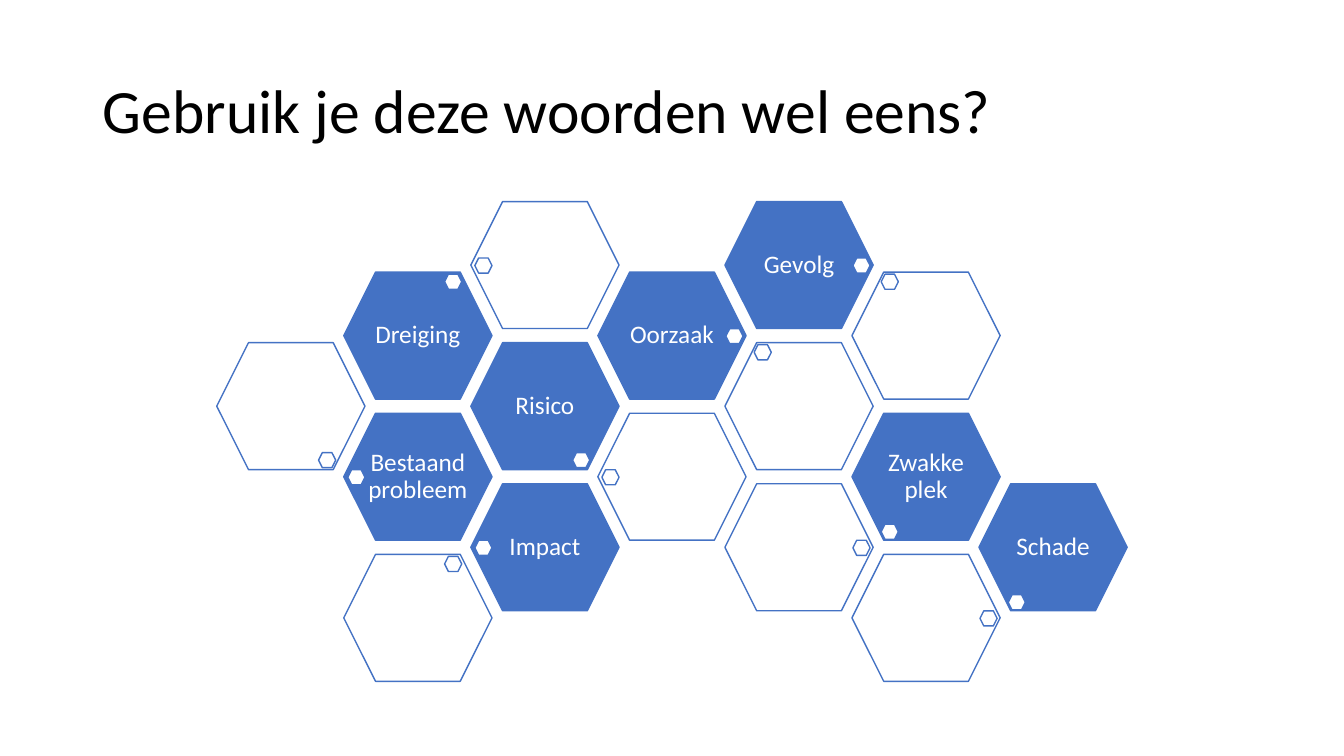
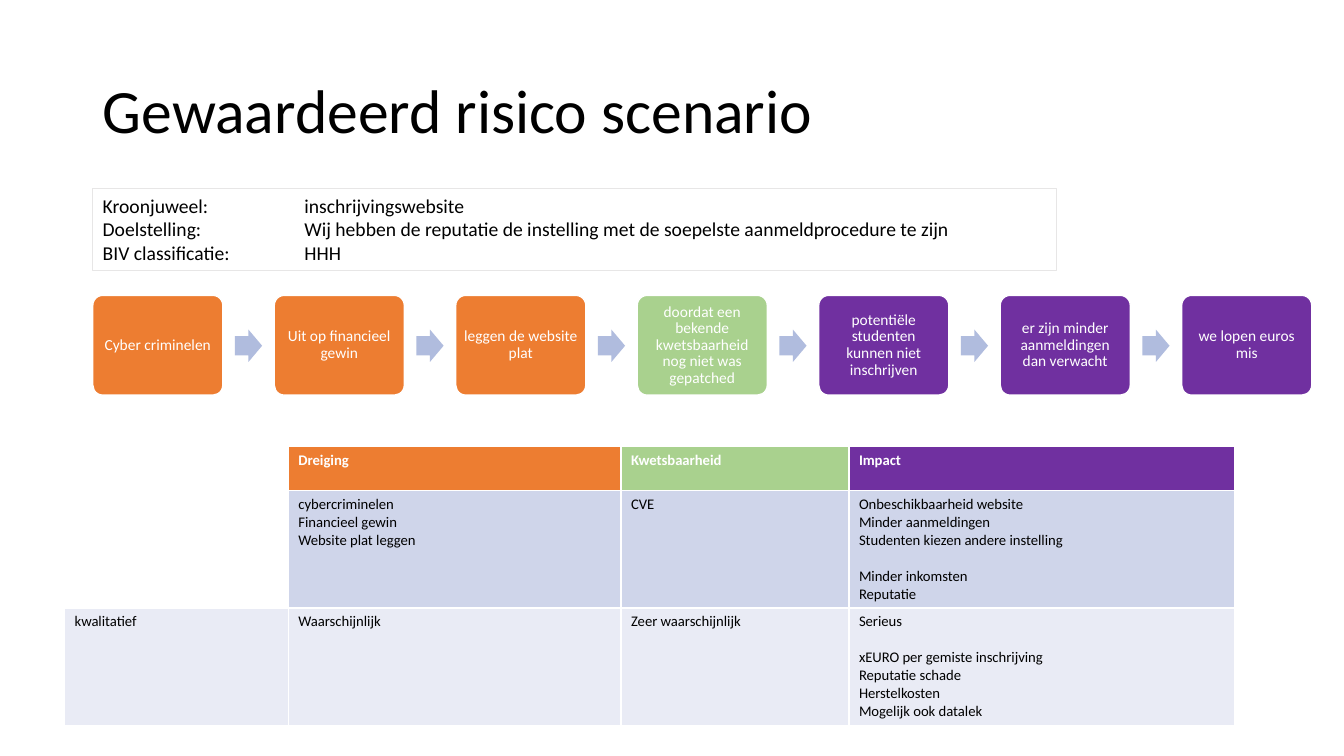
from lxml import etree
from pptx import Presentation
from pptx.dml.color import RGBColor
from pptx.enum.shapes import MSO_SHAPE
from pptx.enum.text import MSO_ANCHOR, MSO_AUTO_SIZE, PP_ALIGN
from pptx.oxml.ns import qn
from pptx.util import Pt

HEX = MSO_SHAPE.HEXAGON
ROUND = MSO_SHAPE.ROUNDED_RECTANGLE
ARROW = MSO_SHAPE.RIGHT_ARROW
RECT = MSO_SHAPE.RECTANGLE
LEFT, CENTER = PP_ALIGN.LEFT, PP_ALIGN.CENTER
TOP, MIDDLE = MSO_ANCHOR.TOP, MSO_ANCHOR.MIDDLE
NO_FIT = MSO_AUTO_SIZE.NONE

WHITE = RGBColor(0xFF, 0xFF, 0xFF)
BLACK = RGBColor(0x00, 0x00, 0x00)
BLUE = RGBColor(0x44, 0x72, 0xC4)
ORANGE = RGBColor(0xED, 0x7D, 0x31)
GREEN = RGBColor(0xA9, 0xD1, 0x8E)
PURPLE = RGBColor(0x70, 0x30, 0xA0)
PALE = RGBColor(0xB0, 0xBC, 0xDE)
GREY = RGBColor(0xE7, 0xE6, 0xE6)
BAND = RGBColor(0xCF, 0xD5, 0xEA)
LIGHT = RGBColor(0xE9, 0xEB, 0xF5)

PX = 9144  # EMU per px, 100 px to the inch
FONT = "Calibri"


def px(*sizes):
    return [size * PX for size in sizes]


class Deck:
    def __init__(self):
        self.prs = Presentation()
        self.prs.slide_width, self.prs.slide_height = px(1333, 750)
        self.slide = None

    def style(self, par, size, color, align=LEFT, bold=False):
        par.alignment = align
        font = par.font
        font.name, font.size, font.bold = FONT, Pt(size), bold
        font.color.rgb = color

    def page(self, text):
        self.slide = self.prs.slides.add_slide(self.prs.slide_layouts[5])
        title = self.slide.shapes.title
        title.left, title.top, title.width, title.height = px(92, 40, 1150, 145)
        frame = title.text_frame
        frame.text = text
        frame.auto_size, frame.vertical_anchor = NO_FIT, MIDDLE
        par = frame.paragraphs[0]
        par.line_spacing = 0.9
        self.style(par, 44, BLACK)

    def shape(self, kind, box, fill=None, line=None, width=1, adj=()):
        item = self.slide.shapes.add_shape(kind, *px(*box))
        item.shadow.inherit = False
        for i, value in enumerate(adj):
            item.adjustments[i] = value
        if fill is None:
            item.fill.background()
        else:
            item.fill.solid()
            item.fill.fore_color.rgb = fill
        if line is None:
            item.line.fill.background()
        else:
            item.line.color.rgb = line
            item.line.width = Pt(width)
        return item

    def label(self, item, text, size, side, edge):
        frame = item.text_frame
        frame.word_wrap, frame.vertical_anchor = True, MIDDLE
        frame.margin_left = frame.margin_right = side * PX
        frame.margin_top = frame.margin_bottom = edge * PX
        frame.text = text
        par = frame.paragraphs[0]
        par.line_spacing = 0.9
        self.style(par, size, WHITE, CENTER)

    def facts(self, box, rows, tab):
        frame = self.shape(RECT, box, line=GREY, width=0.75).text_frame
        frame.word_wrap, frame.vertical_anchor = True, TOP
        frame.text = "\n".join("\t".join(row) for row in rows)
        for par in frame.paragraphs:
            # The tab stop goes in before the font, as the schema orders them
            stops = etree.SubElement(par._p.get_or_add_pPr(), qn("a:tabLst"))
            etree.SubElement(stops, qn("a:tab"), pos=str(tab * PX), algn="l")
            self.style(par, 14, BLACK)

    def cell(self, cell, text, fill, color, bold):
        if not text:
            cell.fill.background()
            return
        cell.fill.solid()
        cell.fill.fore_color.rgb = fill
        frame = cell.text_frame
        # A blank line in the text becomes space above the next group
        groups = [group.split("\n") for group in text.split("\n\n")]
        frame.text = "\n".join(line for group in groups for line in group)
        pars = iter(frame.paragraphs)
        for i, group in enumerate(groups):
            for j in range(len(group)):
                par = next(pars)
                if i and not j:
                    par.space_before = Pt(12.8)
                self.style(par, 10.5, color, bold=bold)

    def table(self, left, top, cols, highs, rows, heads, bands):
        table = self.slide.shapes.add_table(
            len(rows), len(cols), *px(left, top, sum(cols), sum(highs))).table
        table.horz_banding = False
        for col, wide in zip(table.columns, cols):
            col.width = wide * PX
        for r, (row, high) in enumerate(zip(rows, highs)):
            table.rows[r].height = high * PX
            for c, text in enumerate(row):
                fill = bands[r - 1] if r else heads[c]
                self.cell(table.cell(r, c), text, fill, BLACK if r else WHITE, r == 0)


# Honeycomb: column, half row, corner of the small mark, word
CELLS = [
    (1, 3, "W", "Bestaand probleem"), (0, 2, "SE", ""),
    (2, 2, "SE", "Risico"), (3, 3, "W", ""),
    (1, 1, "NE", "Dreiging"), (2, 0, "W", ""),
    (3, 1, "E", "Oorzaak"), (4, 2, "NW", ""),
    (4, 0, "E", "Gevolg"), (5, 1, "NW", ""),
    (5, 3, "SW", "Zwakke plek"), (4, 4, "E", ""),
    (2, 4, "W", "Impact"), (1, 5, "NE", ""),
    (6, 4, "SW", "Schade"), (5, 5, "E", ""),
]
MARKS = {"W": (4, 56), "E": (127, 56), "NW": (29, 2),
         "NE": (100, 2), "SW": (29, 110), "SE": (101, 109)}

STEPS = [
    ("Cyber criminelen", ORANGE),
    ("Uit op financieel gewin", ORANGE),
    ("leggen de website plat", ORANGE),
    ("doordat een bekende kwetsbaarheid nog niet was gepatched", GREEN),
    ("potentiële studenten kunnen niet inschrijven", PURPLE),
    ("er zijn minder aanmeldingen dan verwacht", PURPLE),
    ("we lopen euros mis", PURPLE),
]

FACTS = [
    ("Kroonjuweel:", "inschrijvingswebsite"),
    ("Doelstelling:", "Wij hebben de reputatie de instelling met de "
     "soepelste aanmeldprocedure te zijn"),
    ("BIV classificatie:", "HHH"),
]

ROWS = [
    ("", "Dreiging", "Kwetsbaarheid", "Impact"),
    ("", "cybercriminelen\nFinancieel gewin\nWebsite plat leggen", "CVE",
     "Onbeschikbaarheid website\nMinder aanmeldingen\n"
     "Studenten kiezen andere instelling\n\nMinder inkomsten\nReputatie"),
    ("kwalitatief", "Waarschijnlijk", "Zeer waarschijnlijk",
     "Serieus\n\nxEURO per gemiste inschrijving\nReputatie schade\n"
     "Herstelkosten\nMogelijk ook datalek"),
]


def words(deck):
    deck.page("Gebruik je deze woorden wel eens?")
    for col, row, side, text in CELLS:
        x, y = 215 + 126 * col, 200 + 70 * row
        item = deck.shape(HEX, (x, y, 147, 126), BLUE if text else WHITE,
                          BLUE, adj=(0.25,))
        if text:
            deck.label(item, text, 18, 0, 3)
        dx, dy = MARKS[side]
        deck.shape(HEX, (x + dx, y + dy, 17, 15), WHITE, BLUE, adj=(0.25,))


def risk(deck):
    deck.page("Gewaardeerd risico scenario")
    # Chain of steps
    for i, (text, fill) in enumerate(STEPS):
        x = 92 + 180 * i
        item = deck.shape(ROUND, (x, 293, 129, 99), fill, WHITE, adj=(0.1,))
        deck.label(item, text, 11, 5, 5)
        if i < len(STEPS) - 1:
            deck.shape(ARROW, (x + 141, 327, 27, 32), PALE, adj=(0.6, 0.5))
    # Facts and valuation
    deck.facts((92, 187, 956, 81), FACTS, 200)
    deck.table(64, 443, (222, 330, 226, 383), (44, 115, 115), ROWS,
               (None, ORANGE, GREEN, PURPLE), (BAND, LIGHT))


def main():
    deck = Deck()
    words(deck)
    risk(deck)
    deck.prs.save("out.pptx")


if __name__ == "__main__":
    main()
